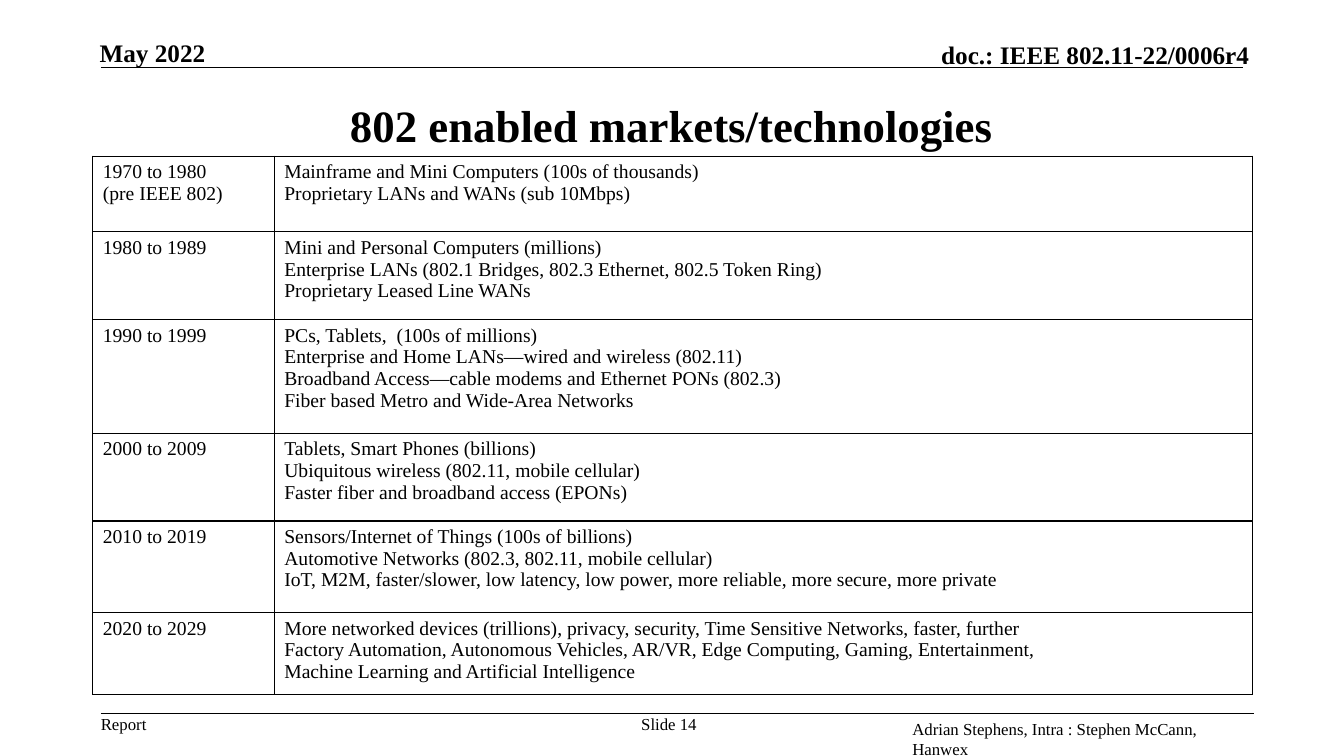
from dataclasses import dataclass

from lxml import etree
from pptx import Presentation
from pptx.dml.color import RGBColor
from pptx.enum.text import MSO_ANCHOR, PP_ALIGN
from pptx.enum.shapes import MSO_CONNECTOR
from pptx.oxml.ns import qn
from pptx.util import Inches, Pt

LEFT, CENTER, RIGHT = PP_ALIGN.LEFT, PP_ALIGN.CENTER, PP_ALIGN.RIGHT
TOP, MIDDLE, BOTTOM = MSO_ANCHOR.TOP, MSO_ANCHOR.MIDDLE, MSO_ANCHOR.BOTTOM
STRAIGHT = MSO_CONNECTOR.STRAIGHT


@dataclass(frozen=True)
class Theme:
    font: str = "Times New Roman"
    ink: RGBColor = RGBColor(0, 0, 0)
    paper: RGBColor = RGBColor(255, 255, 255)
    title: int = 32
    header: int = 18
    body: int = 14
    footer: int = 12
    rule: int = 1


THEME = Theme()

COLUMN_WIDTHS = (1.8, 9.7)
DECADES = [
    (0.75, ["1970 to 1980", "(pre IEEE 802)"],
     ["Mainframe and Mini Computers (100s of thousands)",
      "Proprietary LANs and WANs (sub 10Mbps)"]),
    (0.87, ["1980 to 1989"],
     ["Mini and Personal Computers (millions)",
      "Enterprise LANs (802.1 Bridges, 802.3 Ethernet, 802.5 Token Ring)",
      "Proprietary Leased Line WANs"]),
    (1.13, ["1990 to 1999"],
     ["PCs, Tablets,  (100s of millions)",
      "Enterprise and Home LANs—wired and wireless (802.11)",
      "Broadband Access—cable modems and Ethernet PONs (802.3)",
      "Fiber based Metro and Wide-Area Networks"]),
    (0.87, ["2000 to 2009"],
     ["Tablets, Smart Phones (billions)",
      "Ubiquitous wireless (802.11, mobile cellular)",
      "Faster fiber and broadband access (EPONs)"]),
    (0.91, ["2010 to 2019"],
     ["Sensors/Internet of Things (100s of billions)",
      "Automotive Networks (802.3, 802.11, mobile cellular)",
      "IoT, M2M, faster/slower, low latency, low power, more reliable, more secure, more private"]),
    (0.81, ["2020 to 2029"],
     ["More networked devices (trillions), privacy, security, Time Sensitive Networks, faster, further",
      "Factory Automation, Autonomous Vehicles, AR/VR, Edge Computing, Gaming, Entertainment,",
      "Machine Learning and Artificial Intelligence"]),
]


def style_paragraph(paragraph, size, bold=False, align=LEFT):
    paragraph.alignment = align
    font = paragraph.font
    font.name, font.size, font.bold = THEME.font, Pt(size), bold
    font.color.rgb = THEME.ink


def add_text(slide, box, text, size, bold=False, align=LEFT, anchor=TOP, inset=True, wrap=True):
    frame = slide.shapes.add_textbox(*map(Inches, box)).text_frame
    frame.word_wrap = wrap
    frame.vertical_anchor = anchor
    if not inset:
        frame.margin_left = frame.margin_top = frame.margin_right = frame.margin_bottom = 0
    frame.text = text
    style_paragraph(frame.paragraphs[0], size, bold, align)


def add_rule(slide, left, top, width):
    rule = slide.shapes.add_connector(STRAIGHT, *map(Inches, (left, top, left + width, top)))
    rule.line.color.rgb = THEME.ink
    rule.line.width = Pt(THEME.rule)
    etree.SubElement(rule._element.spPr, qn("a:effectLst"))


def add_header(slide, left, top, width):
    add_rule(slide, left, top + 0.35, width - 0.06)
    add_text(slide, (left - 0.11, top, 2.73, 0.3), "May 2022", THEME.header, bold=True)
    add_text(slide, (left + width - 5.1, top + 0.07, 5.1, 0.3), "doc.: IEEE 802.11-22/0006r4",
             THEME.header, bold=True, align=RIGHT, anchor=BOTTOM, inset=False)


def add_footer(slide, left, top, width):
    add_rule(slide, left, top, width)
    add_text(slide, (left, top, 0.46, 0.2), "Report", THEME.footer, inset=False, wrap=False)
    add_text(slide, (left + 5.27, top, 0.73, 0.2), "Slide 14", THEME.footer,
             align=CENTER, inset=False)
    add_text(slide, (left + 7.95, top, 3.62, 0.25),
             "Adrian Stephens, Intra : Stephen McCann, Hanwex", THEME.footer, wrap=False)


def add_borders(cell):
    properties = cell._tc.get_or_add_tcPr()
    for index, side in enumerate(("a:lnL", "a:lnR", "a:lnT", "a:lnB")):
        line = etree.Element(qn(side), w=str(Pt(THEME.rule)))
        fill = etree.SubElement(line, qn("a:solidFill"))
        etree.SubElement(fill, qn("a:srgbClr"), val=str(THEME.ink))
        properties.insert(index, line)


def add_decades_table(slide, left, top):
    height = sum(decade[0] for decade in DECADES)
    box = (left, top, sum(COLUMN_WIDTHS), height)
    table = slide.shapes.add_table(len(DECADES), len(COLUMN_WIDTHS), *map(Inches, box)).table
    table.first_row = table.horz_banding = False
    for column, width in zip(table.columns, COLUMN_WIDTHS):
        column.width = Inches(width)
    for row, (row_height, *contents) in zip(table.rows, DECADES):
        row.height = Inches(row_height)
        for cell, lines in zip(row.cells, contents):
            cell.text = "\n".join(lines)
            for paragraph in cell.text_frame.paragraphs:
                style_paragraph(paragraph, THEME.body)
            cell.fill.solid()
            cell.fill.fore_color.rgb = THEME.paper
            add_borders(cell)


def build_markets_slide(presentation):
    slide = presentation.slides.add_slide(presentation.slide_layouts[6])
    add_header(slide, 1, 0.32, 11.39)
    add_text(slide, (2.62, 0.81, 8.08, 0.86), "802 enabled markets/technologies",
             THEME.title, bold=True, align=CENTER, anchor=MIDDLE)
    add_decades_table(slide, 0.92, 1.55)
    add_footer(slide, 1, 7.08, 11.44)


def main():
    presentation = Presentation()
    presentation.slide_width, presentation.slide_height = Inches(13.33), Inches(7.5)
    build_markets_slide(presentation)
    presentation.save("out.pptx")


if __name__ == "__main__":
    main()
